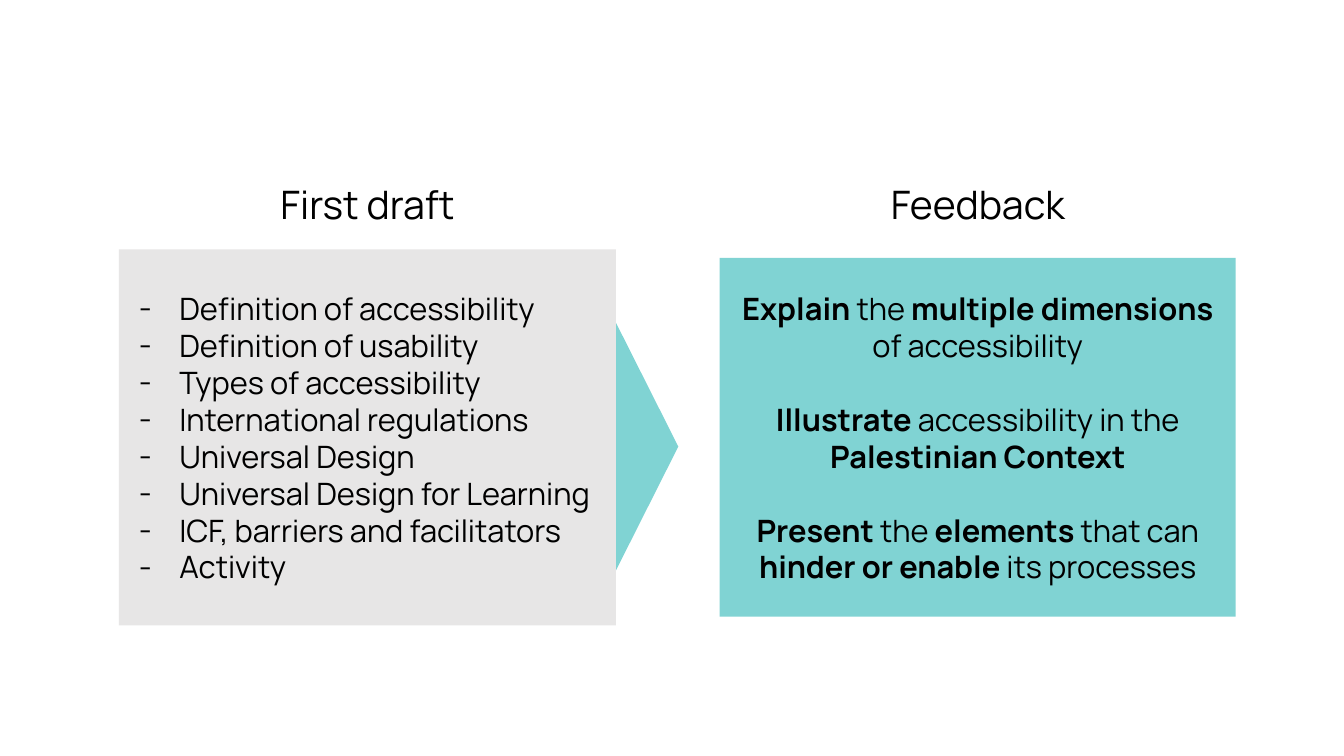
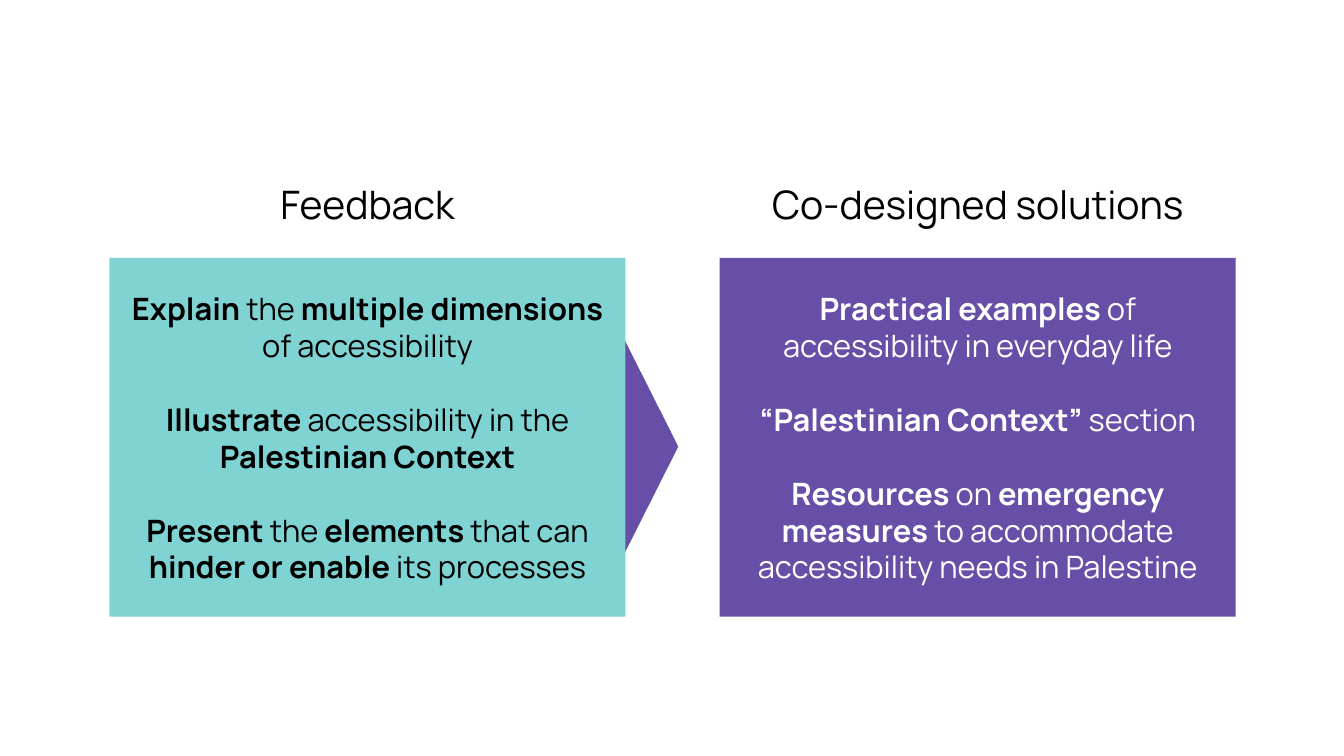
import dataclasses

import lxml.etree
import pptx
import pptx.dml.color
import pptx.enum.shapes
import pptx.enum.text
import pptx.oxml.ns
import pptx.util

Pt = pptx.util.Pt
SHAPE = pptx.enum.shapes.MSO_SHAPE
ALIGN = pptx.enum.text.PP_ALIGN
ANCHOR = pptx.enum.text.MSO_ANCHOR


@dataclasses.dataclass(frozen=True)
class Theme:
    font: str = "Manrope"
    black: str = "000000"
    white: str = "FFFFFF"
    grey: str = "E7E6E6"
    teal: str = "80D3D3"
    purple: str = "674EA7"
    head: int = 28
    body: int = 22
    inset: float = 7.2
    gap: float = 26.4


@dataclasses.dataclass(frozen=True)
class Panel:
    head: str
    wide: float
    size: tuple
    fill: str
    ink: str
    lines: tuple
    dash: bool = False


theme = Theme()


def shape(slide, kind, box, fill):
    """Add a flat filled shape; box is left, top, width, height in points."""
    item = slide.shapes.add_shape(kind, *map(Pt, box))
    item.shadow.inherit = False
    item.fill.solid()
    item.fill.fore_color.rgb = pptx.dml.color.RGBColor.from_string(fill)
    item.line.fill.background()
    return item


def write(frame, lines, size, ink, dash=False):
    """Fill a text frame; words between asterisks are bold."""
    frame.word_wrap = True
    frame.margin_left = frame.margin_right = Pt(theme.inset)
    frame.margin_top = frame.margin_bottom = Pt(theme.inset)
    for i, line in enumerate(lines):
        para = frame.paragraphs[0] if i == 0 else frame.add_paragraph()
        para.alignment = ALIGN.LEFT if dash else ALIGN.CENTER
        if dash:
            props = para._p.get_or_add_pPr()
            props.set("marL", str(Pt(36)))
            props.set("indent", str(-Pt(28.8)))
            qn = pptx.oxml.ns.qn
            tint = lxml.etree.SubElement(props, qn("a:buClr"))
            lxml.etree.SubElement(tint, qn("a:srgbClr"), val=ink)
            lxml.etree.SubElement(props, qn("a:buFont"), typeface=theme.font)
            lxml.etree.SubElement(props, qn("a:buChar"), char="-")
        elif i:
            para.space_before = Pt(theme.gap)
        for j, part in enumerate(line.split("*")):
            if part:
                run = para.add_run()
                run.text = part
                run.font.name = theme.font
                run.font.size = Pt(size)
                run.font.bold = j % 2 == 1
                run.font.color.rgb = pptx.dml.color.RGBColor.from_string(ink)


draft = Panel("First draft", 157, (355, 268.6), theme.grey, theme.black, (
    "Definition of accessibility",
    "Definition of usability",
    "Types of accessibility",
    "International regulations",
    "Universal Design",
    "Universal Design for Learning",
    "ICF, barriers and facilitators",
    "Activity",
), dash=True)
feedback = Panel("Feedback", 157, (368.6, 256.3), theme.teal, theme.black, (
    "*Explain *the *multiple dimensions* of accessibility",
    "*Illustrate *accessibility in the *Palestinian Context*",
    "*Present *the *elements *that can *hinder or enable* its processes",
))
answers = Panel("Co-designed solutions", 347, (368.6, 256.3),
                theme.purple, theme.white, (
    "*Practical examples *of accessibility in everyday life",
    "*“Palestinian Context” *section",
    "*Resources *on *emergency measures *to accommodate accessibility "
    "needs in Palestine",
))

centres = (262.5, 698.4)
middle = 312.4

deck = pptx.Presentation()
deck.slide_width, deck.slide_height = Pt(960), Pt(540)

for pair in ((draft, feedback), (feedback, answers)):
    slide = deck.slides.add_slide(deck.slide_layouts[6])
    arrow = shape(slide, SHAPE.CHEVRON, (375.8, 211, 108.7, 216), pair[1].fill)
    arrow.adjustments[0] = 0.5
    for centre, panel in zip(centres, pair):
        width, height = panel.size
        card = shape(slide, SHAPE.RECTANGLE,
                     (centre - width / 2, middle - height / 2, width, height),
                     panel.fill)
        card.text_frame.vertical_anchor = ANCHOR.MIDDLE
        write(card.text_frame, panel.lines, theme.body, panel.ink, panel.dash)
        label = slide.shapes.add_textbox(
            Pt(centre - panel.wide / 2), Pt(121.7), Pt(panel.wide), Pt(34.6))
        write(label.text_frame, (panel.head,), theme.head, theme.black)

deck.save("out.pptx")
